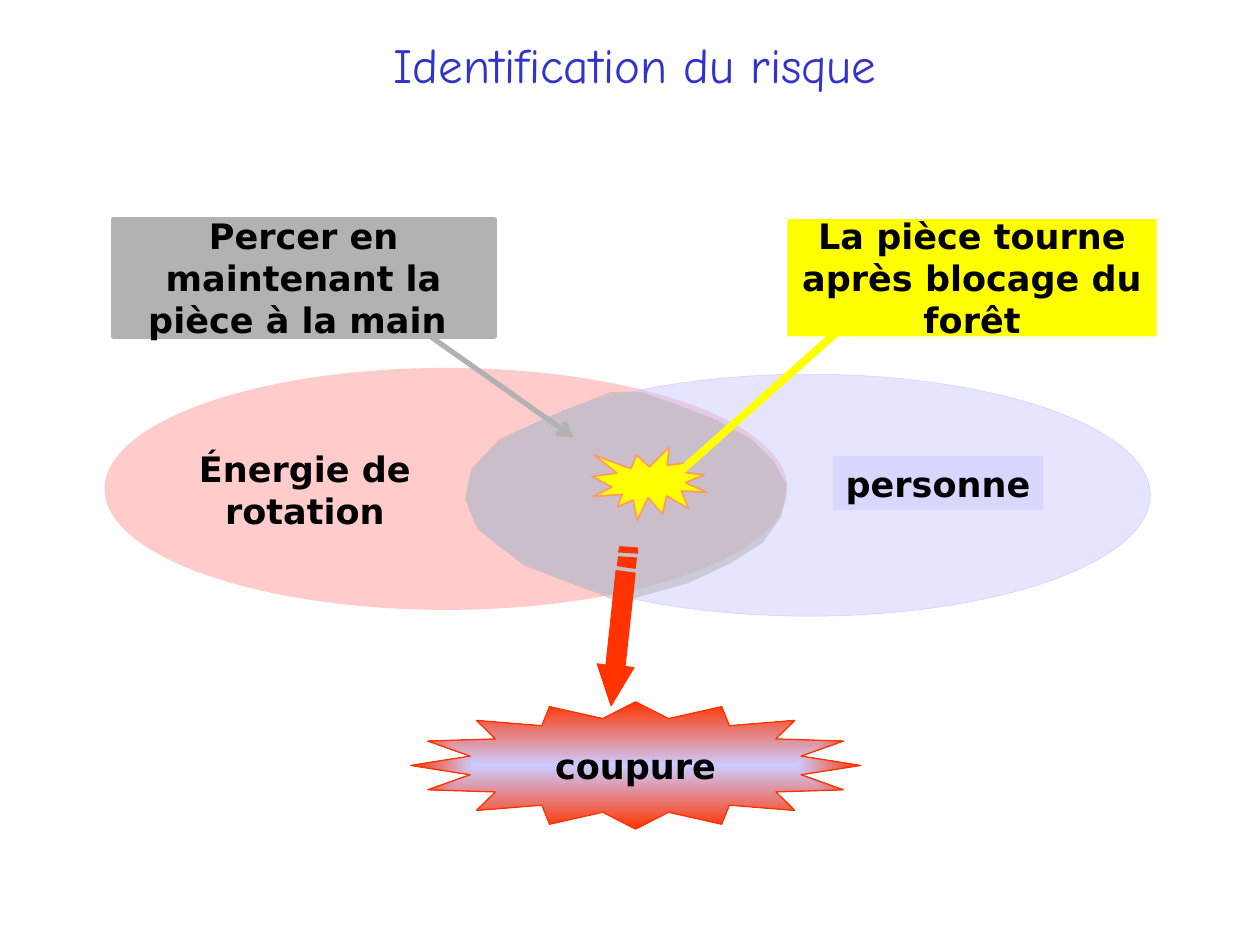
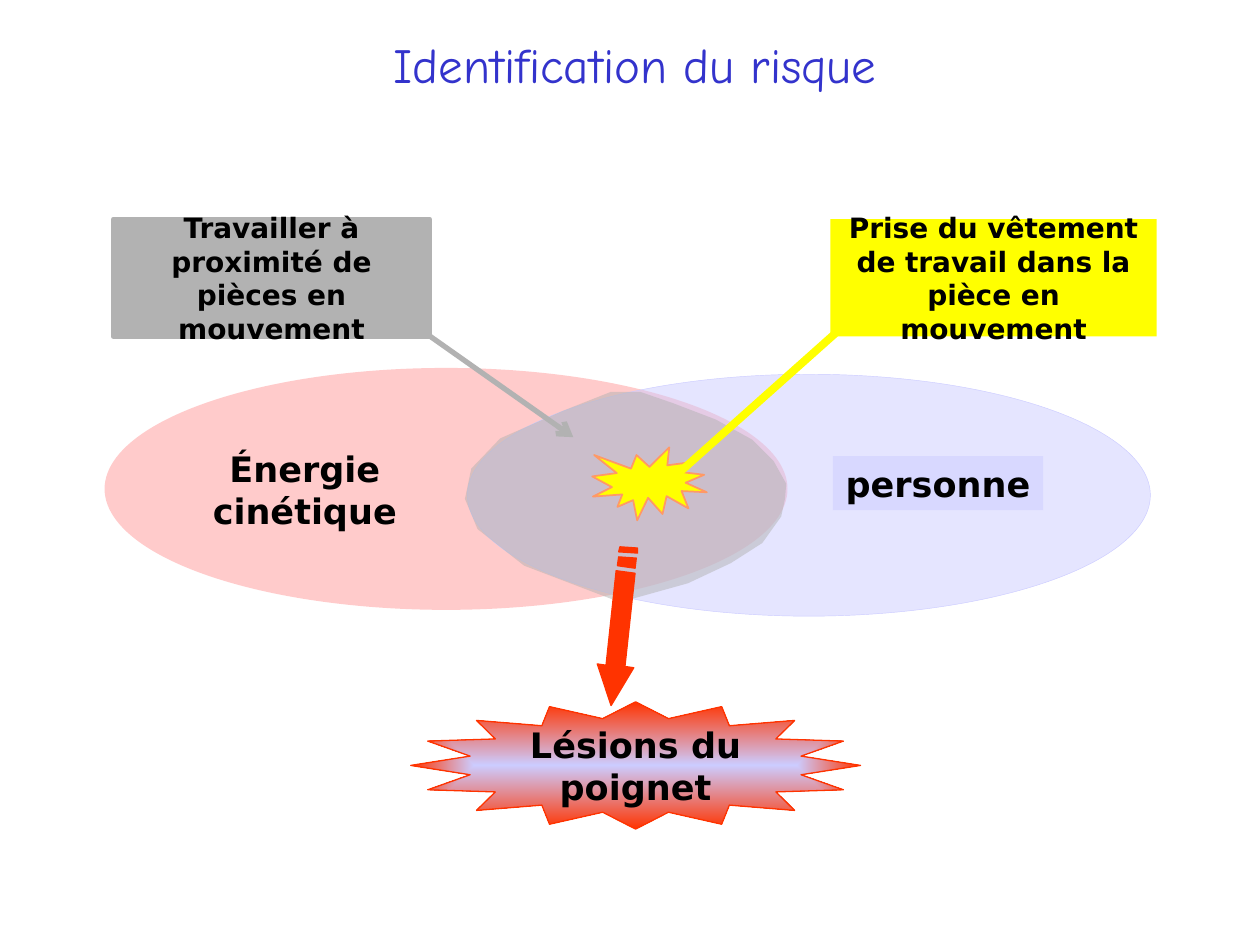
from dataclasses import dataclass

from lxml import etree
from pptx import Presentation
from pptx import util as u
from pptx.dml.color import RGBColor
from pptx.enum import shapes, text
from pptx.oxml.ns import qn


@dataclass(frozen=True)
class Theme:
    title_font: str = "Comic Neue"
    body_font: str = "DejaVu Sans"
    title_size: int = 28
    label_size: int = 20
    small_size: int = 16
    title: str = "3333CC"
    ink: str = "000000"
    energy: str = "FF9999"
    person: str = "CCCCFF"
    situation: str = "B2B2B2"
    event: str = "FFFF00"
    event_edge: str = "FF9966"
    harm: str = "FF3300"


@dataclass(frozen=True)
class Risk:
    energy: str
    situation: str
    situation_width: float
    event: str
    event_width: float
    harm: str
    callout_size: int


THEME = Theme()
SHAPE = shapes.MSO_SHAPE
MIDDLE = text.MSO_ANCHOR.MIDDLE
TOP = text.MSO_ANCHOR.TOP
CALLOUT_TOP, CALLOUT_HEIGHT = 1.74, 0.93
SITUATION_LEFT, EVENT_RIGHT = 0.9, 9.18

RISKS = [
    Risk("Énergie de rotation", "Percer en maintenant la pièce à la main ", 3.02,
         "La pièce tourne après blocage du forêt", 2.93, "coupure", THEME.label_size),
    Risk("Énergie cinétique", "Travailler à proximité de pièces en mouvement", 2.51,
         "Prise du vêtement de travail dans la pièce en mouvement", 2.59,
         "Lésions du poignet", THEME.small_size),
]

OVERLAP = [
    (5.08, 3.11), (5.34, 3.2), (5.68, 3.33), (5.97, 3.49), (6.14, 3.66), (6.24, 3.84),
    (6.23, 3.96), (6.2, 4.1), (6.05, 4.31), (5.8, 4.47), (5.46, 4.63), (4.92, 4.78),
    (4.16, 4.49), (3.79, 4.2), (3.69, 3.96), (3.74, 3.72), (3.97, 3.48), (4.47, 3.26),
    (4.85, 3.11),
]
STRIPED_ARROW = [
    [(5.03, 5.3), (4.96, 5.29), (5.04, 4.55), (4.89, 4.53), (4.81, 5.28), (4.74, 5.27),
     (4.85, 5.6)],
    [(5.05, 4.43), (4.91, 4.42), (4.9, 4.49), (5.04, 4.51)],
    [(5.06, 4.35), (4.92, 4.34), (4.91, 4.38), (5.06, 4.39)],
]


def rgb(color):
    return RGBColor.from_string(color)


def inches(*lengths):
    return [u.Inches(length) for length in lengths]


def paint(shape, fill, alpha=None, edge=None, edge_width=0.75):
    """Give a flat fill (alpha in percent) and an optional outline."""
    shape.shadow.inherit = False
    shape.fill.solid()
    shape.fill.fore_color.rgb = rgb(fill)
    if alpha is not None:
        color = shape.fill._xPr.find(qn("a:solidFill"))[0]
        etree.SubElement(color, qn("a:alpha"), val=str(alpha * 1000))
    if edge:
        shape.line.color.rgb = rgb(edge)
        shape.line.width = u.Pt(edge_width)
    else:
        shape.line.fill.background()


def write(shape, words, size=THEME.label_size, font=THEME.body_font,
          color=THEME.ink, bold=True, anchor=MIDDLE, margins=None):
    frame = shape.text_frame
    settings = {"word_wrap": True, "vertical_anchor": anchor, **(margins or {})}
    for name, value in settings.items():
        setattr(frame, name, value)
    para = frame.paragraphs[0]
    para.alignment = text.PP_ALIGN.CENTER
    span = para.add_run()
    span.text = words
    for name, value in {"name": font, "size": u.Pt(size), "bold": bold}.items():
        setattr(span.font, name, value)
    span.font.color.rgb = rgb(color)


def add_figure(page, kind, place, fill, **style):
    shape = page.shapes.add_shape(kind, *inches(*place))
    paint(shape, fill, **style)
    return shape


def add_label(page, place, words, **style):
    box = page.shapes.add_textbox(*inches(*place))
    write(box, words, **style)


def add_outline(page, contours, fill, **style):
    """Draw one freeform made of closed contours."""
    contours = [[inches(*point) for point in contour] for contour in contours]
    builder = page.shapes.build_freeform(*contours[0][0])
    for index, (start, *rest) in enumerate(contours):
        if index:
            builder.move_to(*start)
        builder.add_line_segments(rest, close=True)
    paint(builder.convert_to_shape(), fill, **style)


def add_pointer(page, start, end, color, width, arrow=False):
    """Draw a line, with an optional arrowhead at its start."""
    line = page.shapes.add_connector(
        shapes.MSO_CONNECTOR.STRAIGHT, *inches(*start, *end))
    line.line.color.rgb = rgb(color)
    line.line.width = u.Pt(width)
    properties = line._element.spPr
    if arrow:
        etree.SubElement(properties.find(qn("a:ln")), qn("a:headEnd"), type="arrow")
    etree.SubElement(properties, qn("a:effectLst"))


def glow_from_centre(shape, inner, outer):
    shape.fill.gradient()
    for stop, color in zip(shape.fill.gradient_stops, (inner, outer)):
        stop.color.rgb = rgb(color)
    gradient = shape.fill._xPr.find(qn("a:gradFill"))
    gradient.remove(gradient.find(qn("a:lin")))
    route = etree.SubElement(gradient, qn("a:path"), {"path": "shape"})
    etree.SubElement(route, qn("a:fillToRect"), dict.fromkeys("ltrb", "50000"))


def add_harm_star(page, words):
    star = add_figure(page, SHAPE.STAR_16_POINT, (3.26, 5.57, 3.57, 1.01),
                      THEME.harm, edge=THEME.harm)
    star.adjustments[0] = 0.375
    glow_from_centre(star, THEME.person, THEME.harm)
    sides = ("left", "top", "right", "bottom")
    write(star, words, margins={f"margin_{side}": 0 for side in sides})


def add_callout(page, left, width, words, size, fill, **style):
    box = add_figure(page, SHAPE.RECTANGLE, (left, CALLOUT_TOP, width, CALLOUT_HEIGHT),
                     fill, **style)
    write(box, words, size=size)


def add_risk_page(deck, risk):
    page = deck.slides.add_slide(deck.slide_layouts[6])
    add_label(page, (0.58, 0.17, 8.92, 0.67), "Identification du risque",
              size=THEME.title_size, font=THEME.title_font, color=THEME.title, bold=False)

    add_figure(page, SHAPE.OVAL, (0.83, 2.92, 5.42, 1.92), THEME.energy, alpha=50)
    add_label(page, (1.36, 3.5, 2.12, 0.77), risk.energy, anchor=TOP)
    add_figure(page, SHAPE.OVAL, (3.71, 2.97, 5.42, 1.92), THEME.person, alpha=50,
               edge=THEME.person, edge_width=0.25)
    person = add_figure(page, SHAPE.RECTANGLE, (6.61, 3.62, 1.67, 0.43),
                        THEME.person, alpha=50)
    write(person, "personne", anchor=TOP)

    add_outline(page, [OVERLAP], THEME.situation, alpha=50)
    add_pointer(page, (4.55, 3.47), (3.33, 2.61), THEME.situation, 3, arrow=True)
    add_outline(page, STRIPED_ARROW, THEME.harm, edge=THEME.harm)
    add_harm_star(page, risk.harm)

    add_figure(page, SHAPE.EXPLOSION1, (4.7, 3.55, 0.91, 0.58), THEME.event,
               edge=THEME.event_edge, edge_width=1)
    add_callout(page, EVENT_RIGHT - risk.event_width, risk.event_width, risk.event,
                risk.callout_size, THEME.event)
    add_pointer(page, (5.38, 3.76), (6.67, 2.61), THEME.event, 4.5)
    add_callout(page, SITUATION_LEFT, risk.situation_width, risk.situation,
                risk.callout_size, THEME.situation, edge=THEME.situation, edge_width=3)


def main():
    deck = Presentation()
    deck.slide_width, deck.slide_height = inches(10, 7.5)
    for risk in RISKS:
        add_risk_page(deck, risk)
    deck.save("out.pptx")


if __name__ == "__main__":
    main()
